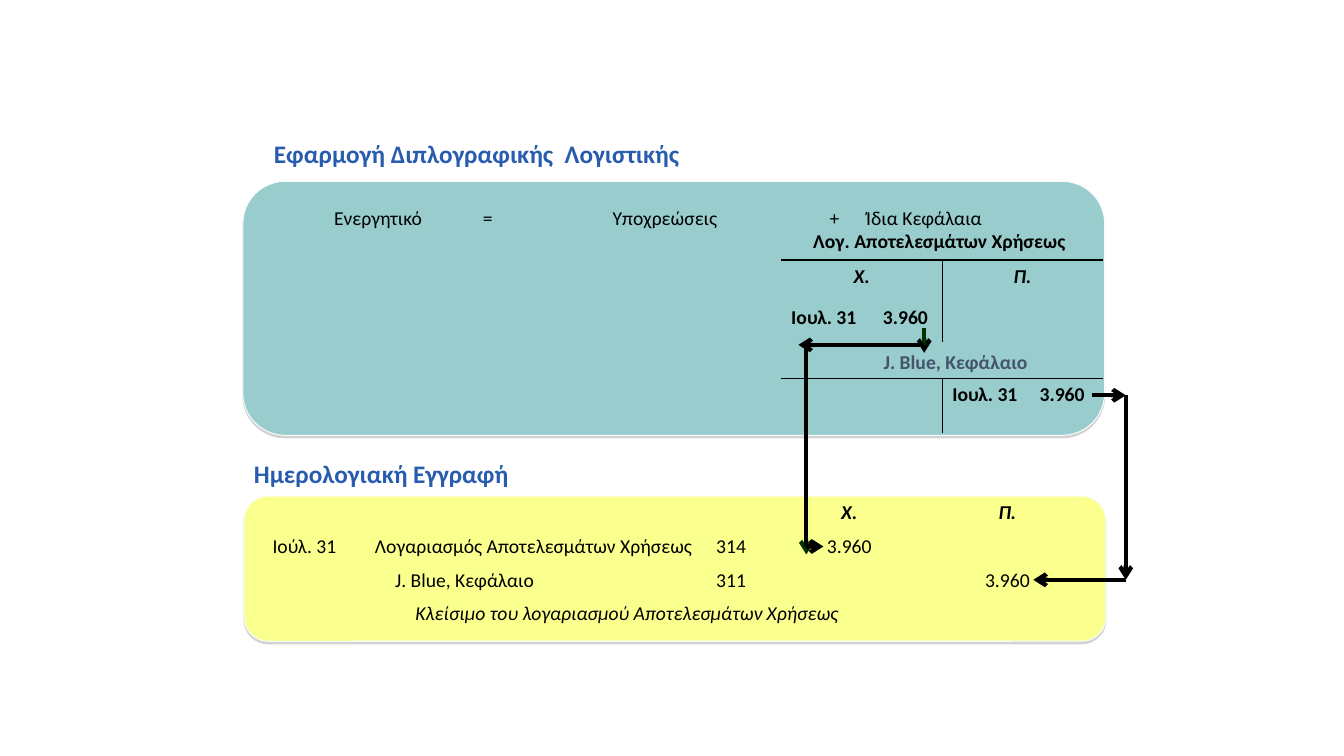
import dataclasses
import lxml.etree
import pptx
import pptx.dml.color
import pptx.enum.shapes
import pptx.enum.text
import pptx.oxml.ns
import pptx.util

Cm = pptx.util.Cm
Pt = pptx.util.Pt
qn = pptx.oxml.ns.qn
Align = pptx.enum.text.PP_ALIGN
PLAIN_GRID = "{2D5ABB26-0587-4C30-8999-92F81FD0307C}"


@dataclasses.dataclass
class Theme:
    font: str = "Calibri"
    head: int = 18
    body: int = 14
    black: str = "000000"
    blue: str = "275CAE"
    slate: str = "44546A"
    green: str = "003300"
    teal: str = "99CCCC"
    yellow: str = "FAFF8E"
    edge: str = "F8FBFC"
    shade: str = "808080"


def rgb(code):
    return pptx.dml.color.RGBColor.from_string(code)


def sub(parent, tag, **attrs):
    return lxml.etree.SubElement(parent, qn(tag), **attrs)


class Board:
    def __init__(self, slide, theme):
        self.slide = slide
        self.theme = theme

    def add_run(self, para, text, size, color, style="", align=Align.LEFT):
        """Add one run; style holds 'b' and/or 'i'."""
        para.alignment = align
        run = para.add_run()
        run.text = text
        font = run.font
        font.name, font.size = self.theme.font, Pt(size)
        font.bold, font.italic = "b" in style, "i" in style
        font.color.rgb = rgb(color)

    def label(self, shape, box, text, size, color):
        shape.left, shape.top, shape.width, shape.height = map(Cm, box)
        frame = shape.text_frame
        frame.word_wrap = True
        frame.auto_size = pptx.enum.text.MSO_AUTO_SIZE.SHAPE_TO_FIT_TEXT
        frame.vertical_anchor = pptx.enum.text.MSO_ANCHOR.TOP
        self.add_run(frame.paragraphs[0], text, size, color, "b")

    def title(self, box, text):
        self.label(self.slide.shapes.title, box, text,
                   self.theme.head, self.theme.blue)

    def text(self, box, text, size, color):
        shape = self.slide.shapes.add_textbox(*map(Cm, box))
        self.label(shape, box, text, size, color)

    def panel(self, box, color):
        kind = pptx.enum.shapes.MSO_SHAPE.ROUNDED_RECTANGLE
        shape = self.slide.shapes.add_shape(kind, *map(Cm, box))
        shape.fill.solid()
        shape.fill.fore_color.rgb = rgb(color)
        shape.line.color.rgb = rgb(self.theme.edge)
        shape.line.width = Pt(0.75)
        shape.shadow.inherit = False
        effects = shape.element.spPr.find(qn("a:effectLst"))
        shadow = sub(effects, "a:outerShdw", blurRad="0",
                     dist=str(Pt(1.8)), dir="5400000")
        tint = sub(shadow, "a:srgbClr", val=self.theme.shade)
        sub(tint, "a:alpha", val="35000")

    def border(self, cell, tag):
        line = sub(cell._tc.get_or_add_tcPr(), tag, w=str(Pt(1)))
        sub(sub(line, "a:solidFill"), "a:srgbClr", val=self.theme.black)

    def table(self, left, top, cols, rows, cells, spans=(), account=False):
        """Cells map (row, col) to text, style, align, left inset, tab stop.

        An account gets the T-shaped rules of a ledger account.
        """
        frame = self.slide.shapes.add_table(
            len(rows), len(cols), Cm(left), Cm(top), Cm(sum(cols)), Cm(sum(rows)))
        table = frame.table
        table.first_row = table.horz_banding = False
        table._tbl.tblPr.find(qn("a:tableStyleId")).text = PLAIN_GRID
        for col, width in zip(table.columns, cols):
            col.width = Cm(width)
        for row, height in zip(table.rows, rows):
            row.height = Cm(height)
        for row, first, last in spans:
            table.cell(row, first).merge(table.cell(row, last))
        for r in range(len(rows)):
            for c in range(len(cols)):
                cell = table.cell(r, c)
                if account:
                    self.border(cell, "a:lnL" if c else "a:lnR")
                    if r == 0:
                        self.border(cell, "a:lnT")
                cell.fill.background()
                self.fill(cell, *cells.get((r, c), ()))

    def fill(self, cell, text="", style="", align=Align.LEFT, inset=0.25, tab=0):
        para = cell.text_frame.paragraphs[0]
        if not text:
            sub(para._p, "a:endParaRPr", sz=str(self.theme.body * 100))
            return
        cell.margin_left = Cm(inset)
        self.add_run(para, text, self.theme.body, self.theme.black, style, align)
        if tab:
            stops = sub(para._p.get_or_add_pPr(), "a:tabLst")
            sub(stops, "a:tab", pos=str(Cm(tab)), algn="l")

    def line(self, start, end, color, arrow=True):
        kind = pptx.enum.shapes.MSO_CONNECTOR.STRAIGHT
        link = self.slide.shapes.add_connector(kind, *map(Cm, start + end))
        link.line.color.rgb = rgb(color)
        link.line.width = Pt(3)
        if arrow:
            sub(link.line._get_or_add_ln(), "a:tailEnd", type="arrow")
        sub(link._element.spPr, "a:effectLst")


def main():
    deck = pptx.Presentation()
    deck.slide_width, deck.slide_height = Cm(33.87), Cm(19.05)
    theme = Theme()
    board = Board(deck.slides.add_slide(deck.slide_layouts[5]), theme)
    mid = Align.CENTER

    board.title((6.65, 3.35, 11.35, 1.02), "Εφαρμογή Διπλογραφικής  Λογιστικής")
    board.panel((6.12, 4.57, 21.72, 6.4), theme.teal)
    board.table(6.15, 5.08, (5.54, 1.17, 7.8, 0.81, 5.46), (1.04,), {
        (0, 0): ("Ενεργητικό", "", mid, 1.47),
        (0, 1): ("=", "", Align.LEFT, 0.48),
        (0, 2): ("Υποχρεώσεις", "", mid),
        (0, 3): ("+",),
        (0, 4): ("Ίδια Κεφάλαια", "", Align.LEFT, 0.36)})
    board.table(6.35, 5.66, (6.93,) * 3, (0.84,), {
        (0, 2): ("Λογ. Αποτελεσμάτων Χρήσεως", "b", mid)})

    sides = (4.06, 4.04)
    board.table(19.69, 6.55, sides, (1.03, 1.03), {
        (0, 0): ("Χ.", "bi", mid),
        (0, 1): ("Π.", "bi", mid),
        (1, 0): ("Ιουλ. 31\t3.960", "b", Align.LEFT, 0.25, 2.31)}, account=True)

    board.panel((6.15, 12.5, 21.72, 3.66), theme.yellow)
    board.table(6.15, 12.5, (3.05, 10.11, 1.4, 2.79, 3.78), (0.85,) * 5, {
        (0, 2): ("Χ.", "bi", mid),
        (0, 4): ("Π.", "bi", mid),
        (1, 0): ("Ιούλ. 31", "", mid),
        (1, 1): ("Λογαριασμός Αποτελεσμάτων Χρήσεως\t314", "",
                 Align.LEFT, 0.25, 8.6),
        (1, 2): ("3.960", "", mid),
        (2, 1): ("J. Blue, Κεφάλαιο\t311", "", Align.LEFT, 0.76, 8.09),
        (2, 4): ("3.960", "", mid),
        (3, 1): ("Κλείσιμο του λογαριασμού Αποτελεσμάτων Χρήσεως", "i",
                 Align.LEFT, 1.27)},
        spans=((0, 2, 3), (1, 2, 3), (2, 2, 3), (3, 1, 3), (4, 1, 2)))
    board.text((6.15, 11.43, 8.86, 1.02), "Ημερολογιακή Εγγραφή",
               theme.head, theme.blue)
    board.table(19.69, 9.53, sides, (1.37,), {
        (0, 1): ("Ιουλ. 31\t3.960", "b", Align.LEFT, 0.25, 2.2)}, account=True)
    board.text((22.02, 8.69, 4.88, 0.86), "J. Blue, Κεφάλαιο",
               theme.body, theme.slate)

    # Debit route, from the result account to the journal
    debit, turn, entry = (23.29, 8.26), (23.29, 8.69), (20.32, 13.77)
    board.line(debit, (23.29, 8.89), theme.black)
    board.line(debit, turn, theme.green, arrow=False)
    board.line(turn, (20.12, 8.69), theme.black)
    board.line((20.32, 8.69), (20.32, 13.97), theme.green)
    board.line(entry, (20.32, 8.69), theme.black, arrow=False)
    board.line(entry, (20.75, 13.77), theme.black)

    # Credit route, from the capital account to the journal
    credit = ((27.51, 9.96), (28.37, 9.96), (28.37, 14.61), (26.04, 14.61))
    for start, end in zip(credit, credit[1:]):
        board.line(start, end, theme.black)

    deck.save("out.pptx")


if __name__ == "__main__":
    main()
